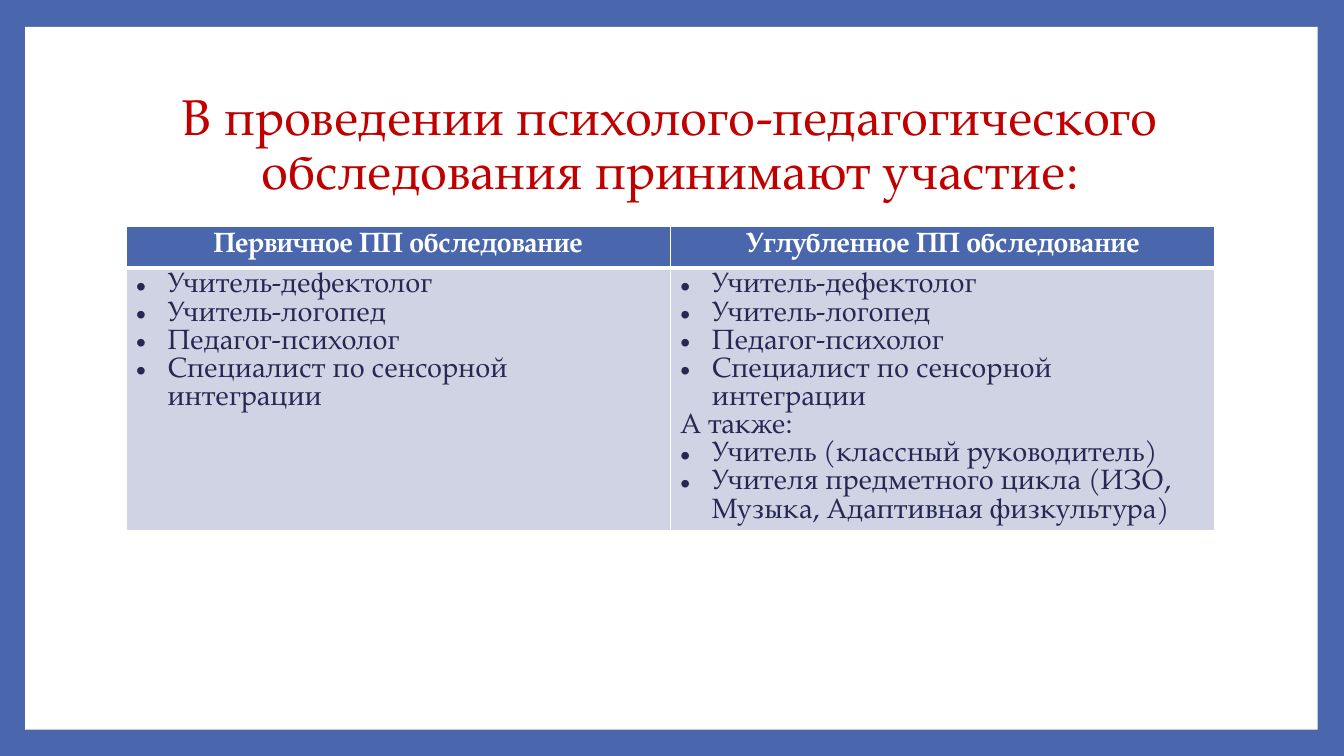
from lxml import etree
from pptx import Presentation
from pptx.dml.color import RGBColor
from pptx.enum.shapes import MSO_SHAPE
from pptx.enum.text import MSO_ANCHOR, MSO_AUTO_SIZE, PP_ALIGN
from pptx.oxml.ns import qn
from pptx.util import Pt

TITLE = "В проведении психолого-педагогического обследования принимают участие:"
SPECIALISTS = [
    "Учитель-дефектолог",
    "Учитель-логопед",
    "Педагог-психолог",
    "Специалист по сенсорной интеграции",
]
ALSO = "А также:"
TEACHERS = [
    "Учитель (классный руководитель)",
    "Учителя предметного цикла (ИЗО, Музыка, Адаптивная физкультура)",
]
COLUMNS = [
    ("Первичное ПП обследование", SPECIALISTS),
    ("Углубленное ПП обследование", SPECIALISTS + [ALSO] + TEACHERS),
]

BLUE = RGBColor(0x4A, 0x66, 0xAC)
WHITE = RGBColor(0xFF, 0xFF, 0xFF)
RED = RGBColor(0xC0, 0x00, 0x00)
NAVY = RGBColor(0x24, 0x28, 0x52)
PALE = RGBColor(0xD0, 0xD3, 0xE3)
FONT = "TeX Gyre Pagella"
RECTANGLE = MSO_SHAPE.RECTANGLE
CENTER, LEFT = PP_ALIGN.CENTER, PP_ALIGN.LEFT
MIDDLE = MSO_ANCHOR.MIDDLE
NO_AUTOFIT = MSO_AUTO_SIZE.NONE

CONTENT_LEFT, CONTENT_WIDTH = 90, 777.6
TABLE_TOP = 162
ROW_HEIGHTS = [29.2, 188]
BULLET_INDENT = 22.5


def write(paragraph, text, size, color, spacing, align, bold=False):
    paragraph.alignment = align
    paragraph.line_spacing = Pt(spacing)
    paragraph.space_before = paragraph.space_after = Pt(0)
    run = paragraph.add_run()
    run.text = text
    run.font.name = FONT
    run.font.size = Pt(size)
    run.font.bold = bold
    run.font.color.rgb = color


def add_bullet(paragraph):
    properties = paragraph._p.get_or_add_pPr()
    properties.set("marL", str(Pt(BULLET_INDENT)))
    properties.set("indent", str(-Pt(BULLET_INDENT)))
    etree.SubElement(properties, qn("a:buFont"), typeface="Arial")
    etree.SubElement(properties, qn("a:buChar"), char="•")


def format_cell(cell, fill, top, bottom):
    cell.fill.solid()
    cell.fill.fore_color.rgb = fill
    properties = cell._tc.get_or_add_tcPr()
    widths = {"a:lnL": 1, "a:lnR": 1, "a:lnT": top, "a:lnB": bottom}
    for position, (side, width) in enumerate(widths.items()):
        line = etree.Element(qn(side), w=str(Pt(width)))
        solid = etree.SubElement(line, qn("a:solidFill"))
        etree.SubElement(solid, qn("a:srgbClr"), val=str(WHITE))
        properties.insert(position, line)


def add_panel(slide):
    panel = slide.shapes.add_shape(RECTANGLE, Pt(18), Pt(19.2), Pt(923.3), Pt(502))
    panel.shadow.inherit = False
    panel.fill.solid()
    panel.fill.fore_color.rgb = WHITE
    panel.line.fill.background()
    slide.shapes._spTree.insert(2, panel._element)


def add_title(slide):
    title = slide.shapes.title
    title.left, title.top = Pt(CONTENT_LEFT), Pt(48.2)
    title.width, title.height = Pt(CONTENT_WIDTH), Pt(106.6)
    frame = title.text_frame
    frame.word_wrap = True
    frame.auto_size = NO_AUTOFIT
    frame.vertical_anchor = MIDDLE
    frame.margin_top, frame.margin_bottom = Pt(9), Pt(3.6)
    write(frame.paragraphs[0], TITLE, 36, RED, 38.6, CENTER)


def add_participants(slide):
    table = slide.shapes.add_table(
        len(ROW_HEIGHTS), len(COLUMNS), Pt(CONTENT_LEFT), Pt(TABLE_TOP),
        Pt(CONTENT_WIDTH), Pt(sum(ROW_HEIGHTS))).table
    table.horz_banding = False
    for row, height in zip(table.rows, ROW_HEIGHTS):
        row.height = Pt(height)
    for index, (heading, people) in enumerate(COLUMNS):
        table.columns[index].width = Pt(CONTENT_WIDTH / len(COLUMNS))
        header, body = table.cell(0, index), table.cell(1, index)
        format_cell(header, BLUE, 1, 3)
        format_cell(body, PALE, 3, 1)
        write(header.text_frame.paragraphs[0], heading, 20, WHITE, 20.1, CENTER, True)
        frame = body.text_frame
        for number, person in enumerate(people):
            paragraph = frame.add_paragraph() if number else frame.paragraphs[0]
            write(paragraph, person, 20, NAVY, 20.1, LEFT)
            if person != ALSO:
                add_bullet(paragraph)


def main():
    presentation = Presentation()
    presentation.slide_width, presentation.slide_height = Pt(960), Pt(540)
    slide = presentation.slides.add_slide(presentation.slide_layouts[5])
    slide.background.fill.solid()
    slide.background.fill.fore_color.rgb = BLUE
    add_panel(slide)
    add_title(slide)
    add_participants(slide)
    presentation.save("out.pptx")


if __name__ == "__main__":
    main()
